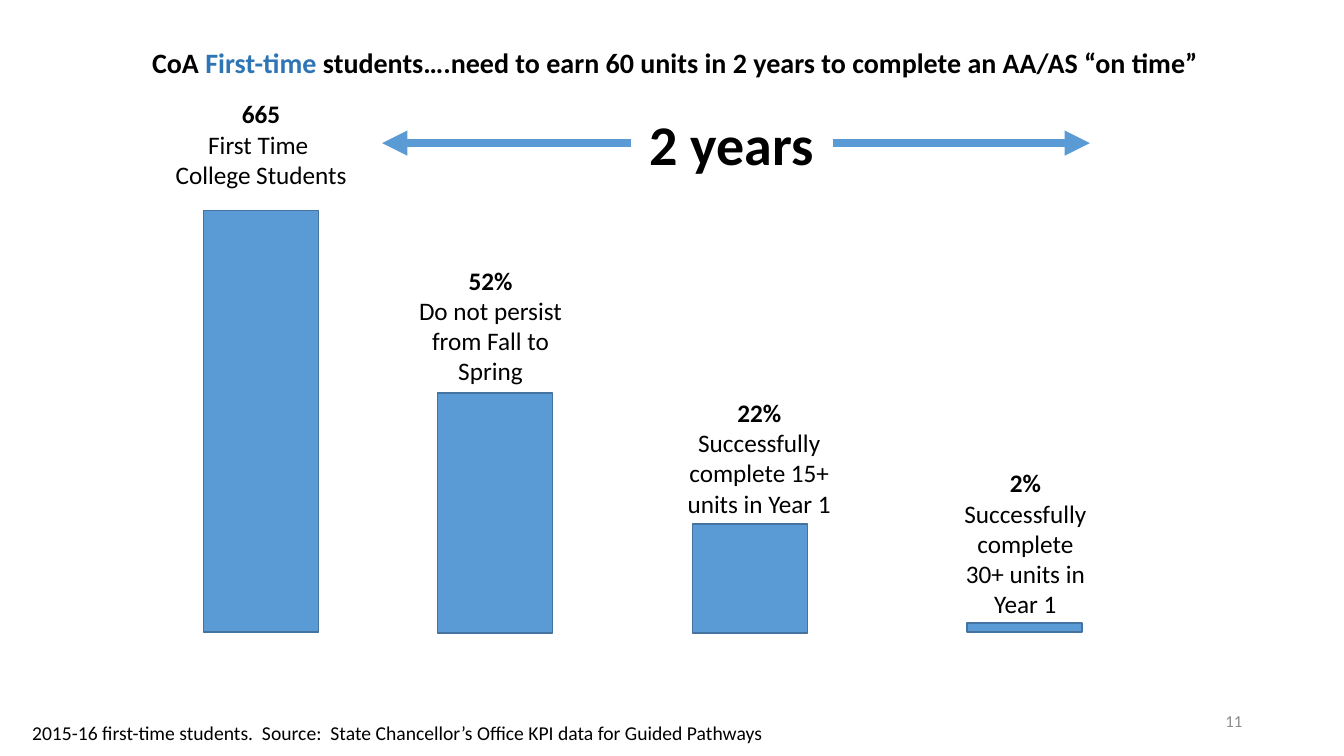
from lxml import etree
from pptx import Presentation
from pptx.dml.color import RGBColor
from pptx.enum.shapes import MSO_CONNECTOR, MSO_SHAPE
from pptx.enum.text import MSO_ANCHOR, MSO_AUTO_SIZE, PP_ALIGN
from pptx.oxml.ns import qn
from pptx.util import Inches, Pt

LEFT, CENTER, RIGHT = PP_ALIGN.LEFT, PP_ALIGN.CENTER, PP_ALIGN.RIGHT
MIDDLE = MSO_ANCHOR.MIDDLE
GROW = MSO_AUTO_SIZE.SHAPE_TO_FIT_TEXT
STRAIGHT = MSO_CONNECTOR.STRAIGHT
RECTANGLE = MSO_SHAPE.RECTANGLE

FONT = "Calibri"
BLACK, GREY = "000000", "8C8C8C"
BLUE, OUTLINE, ACCENT = "5B9BD5", "43739E", "2E75B6"
BAR_WIDTH = 1.14

STAGES = [
    ((2.02, 2.09, 4.18), (1.63, 0.93, 1.92, 1.01), False,
     ["665", "First Time ", "College Students"]),
    ((4.34, 3.9, 2.38), (3.95, 2.58, 1.83, 1.31), True,
     ["52%", "Do not persist from Fall to Spring"]),
    ((6.87, 5.2, 1.08), (6.67, 3.89, 1.72, 1.31), True,
     ["22%", "Successfully complete 15+ units in Year 1"]),
    ((9.59, 6.18, 0.09), (9.4, 4.59, 1.54, 1.62), True,
     ["2%", "Successfully complete 30+ units in Year 1"]),
]


def color(value):
    """Return the colour for a hex string."""
    return RGBColor.from_string(value)


def add_text(slide, box, paragraphs, size, align=LEFT, wrap=True):
    """Place paragraphs of (text, bold, colour) runs in a box."""
    textbox = slide.shapes.add_textbox(*map(Inches, box))
    frame = textbox.text_frame
    frame.word_wrap = wrap
    frame.auto_size = GROW
    for index, runs in enumerate(paragraphs):
        paragraph = frame.paragraphs[0] if index == 0 else frame.add_paragraph()
        paragraph.alignment = align
        for text, bold, ink in runs:
            run = paragraph.add_run()
            run.text = text
            run.font.name = FONT
            run.font.size = Pt(size)
            run.font.bold = bold
            run.font.color.rgb = color(ink)
    return frame


def add_heading(slide, box):
    """Place the headline with its highlighted group."""
    add_text(slide, box, [[
        ("CoA ", True, BLACK),
        ("First-time", True, ACCENT),
        (" students….need to earn 60 units in 2 years to complete an AA/AS “on time”",
         True, BLACK),
    ]], 20, wrap=False)


def add_stage(slide, bar_box, label_box, wrap, lines):
    """Place one bar and the label above it."""
    left, top, height = bar_box
    bar = slide.shapes.add_shape(
        RECTANGLE, *map(Inches, (left, top, BAR_WIDTH, height)))
    bar.shadow.inherit = False
    bar.fill.solid()
    bar.fill.fore_color.rgb = color(BLUE)
    bar.line.color.rgb = color(OUTLINE)
    bar.line.width = Pt(1)
    label = [[(line, index == 0, BLACK)] for index, line in enumerate(lines)]
    add_text(slide, label_box, label, 18, CENTER, wrap)


def add_arrow(slide, start, end, y):
    """Draw a thick horizontal arrow from start to end."""
    arrow = slide.shapes.add_connector(
        STRAIGHT, *map(Inches, (start, y, end, y)))
    arrow.line.color.rgb = color(BLUE)
    arrow.line.width = Pt(6)
    line = arrow.line._get_or_add_ln()
    etree.SubElement(line, qn("a:tailEnd"), type="triangle")
    etree.SubElement(arrow._element.spPr, qn("a:effectLst"))


def add_timespan(slide, box):
    """Place the duration with an arrow out to each side."""
    left, top, width, _ = box
    add_text(slide, box, [[("2 years", True, BLACK)]], 40, CENTER)
    y = top + 0.38
    add_arrow(slide, left + width, left + width + 2.55, y)
    add_arrow(slide, left, left - 2.47, y)


def add_footer(slide, source_box, number_box):
    """Place the data source and the page number."""
    source = ("2015-16 first-time students.  Source:  "
              "State Chancellor’s Office KPI data for Guided Pathways")
    add_text(slide, source_box, [[(source, False, BLACK)]], 14, wrap=False)
    number = add_text(slide, number_box, [[("11", False, GREY)]], 12, RIGHT)
    number.auto_size = MSO_AUTO_SIZE.NONE
    number.vertical_anchor = MIDDLE


def main():
    """Build the slide and save it."""
    deck = Presentation()
    deck.slide_width, deck.slide_height = Inches(13.33), Inches(7.5)
    slide = deck.slides.add_slide(deck.slide_layouts[6])
    for stage in STAGES:
        add_stage(slide, *stage)
    add_heading(slide, (1.41, 0.4, 10.67, 0.44))
    add_timespan(slide, (6.26, 1.04, 2, 0.77))
    add_footer(slide, (0.22, 7.1, 7.53, 0.34), (9.42, 6.95, 3, 0.4))
    deck.save("out.pptx")


if __name__ == "__main__":
    main()
